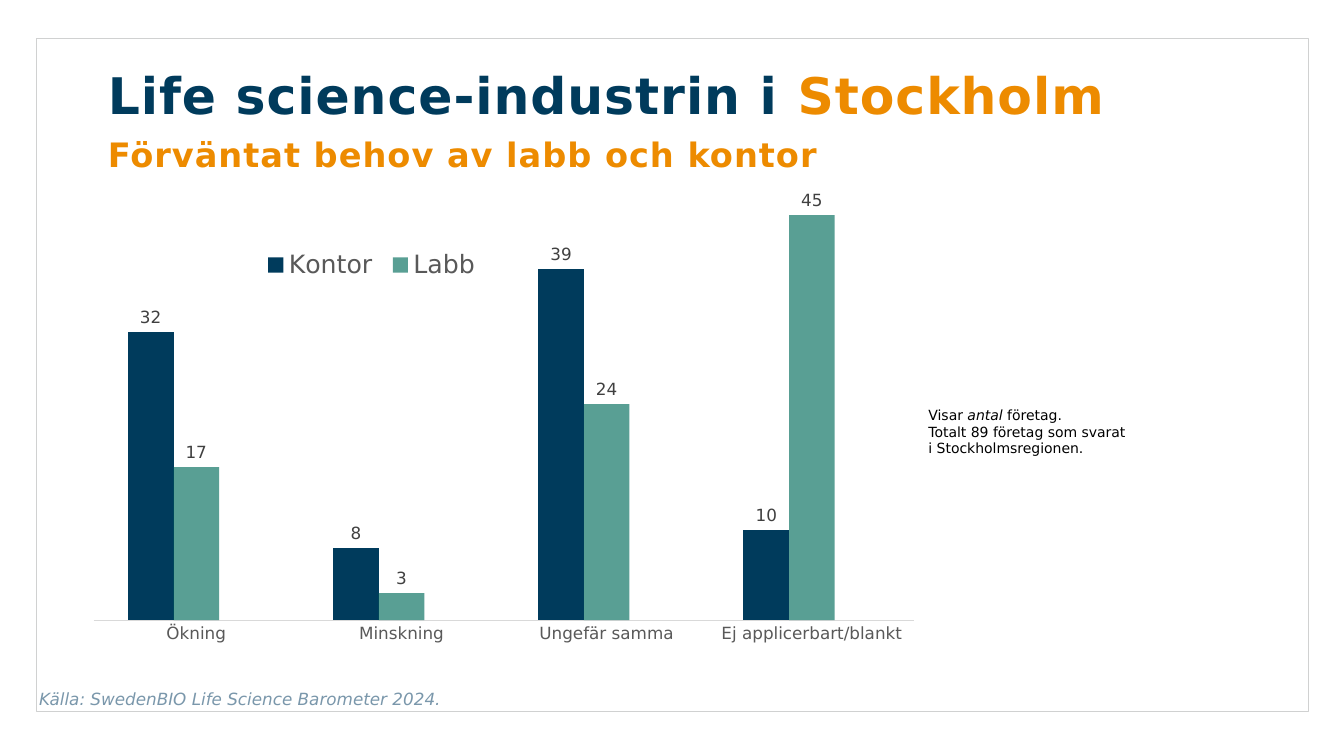
import pptx
import pptx.util
import pptx.chart.data
import pptx.dml.color
import pptx.enum.chart
import pptx.enum.shapes
import pptx.enum.text
import pptx.oxml
import pptx.oxml.ns

RGB = pptx.dml.color.RGBColor
NAVY = RGB(0x00, 0x3B, 0x5C)
ORANGE = RGB(0xED, 0x8B, 0x00)
GREEN = RGB(0x00, 0x6C, 0x5B)
STEEL = RGB(0x7A, 0x97, 0xAB)
BLACK = RGB(0x00, 0x00, 0x00)
DARK = RGB(0x40, 0x40, 0x40)
GREY = RGB(0x59, 0x59, 0x59)
RULE = RGB(0xD9, 0xD9, 0xD9)
EDGE = RGB(0xD0, 0xD1, 0xD1)

FACE = "DejaVu Sans"
WIDE = pptx.util.Inches(13.33)
HIGH = pptx.util.Inches(7.5)

CATS = ["Ökning", "Minskning", "Ungefär samma", "Ej applicerbart/blankt"]
# The empty third series keeps its slot beside each pair of columns
SERIES = [
    ("Kontor", [32, 8, 39, 10], NAVY),
    ("Labb", [17, 3, 24, 45], GREEN),
    ("Series 3", [None] * 4, STEEL),
]


def place(left, top, width, height):
    """Turn percentages of the slide into lengths."""
    return (int(WIDE * left / 100), int(HIGH * top / 100),
            int(WIDE * width / 100), int(HIGH * height / 100))


def style(font, size, color):
    font.name = FACE
    font.size = pptx.util.Pt(size)
    font.color.rgb = color


def node(xml):
    head, tail = xml.split(">", 1)
    space = pptx.oxml.ns.nsdecls("c", "a")
    return pptx.oxml.parse_xml(f"{head} {space}>{tail}")


def layout(left, top, width, height, inner=False):
    """Manual chart layout in shares of the chart's size."""
    target = '<c:layoutTarget val="inner"/>' if inner else ""
    sides = zip("xywh", (left, top, width, height))
    return node("<c:layout><c:manualLayout>" + target
                + '<c:xMode val="edge"/><c:yMode val="edge"/>'
                + "".join(f'<c:{k} val="{v}"/>' for k, v in sides)
                + "</c:manualLayout></c:layout>")


def add_frame(slide, area):
    frame = slide.shapes.add_shape(
        pptx.enum.shapes.MSO_SHAPE.RECTANGLE, *place(*area))
    frame.shadow.inherit = False
    frame.fill.background()
    frame.line.color.rgb = EDGE
    frame.line.width = pptx.util.Pt(0.25)


def add_box(slide, area, wrap=False):
    text = slide.shapes.add_textbox(*place(*area)).text_frame
    text.word_wrap = wrap
    if not wrap:
        text.auto_size = pptx.enum.text.MSO_AUTO_SIZE.SHAPE_TO_FIT_TEXT
    return text


def add_title(slide, area):
    text = add_box(slide, area, wrap=True)
    lines = [
        (36, [("Life science-industrin i ", NAVY), ("Stockholm", ORANGE)]),
        (24, [("Förväntat behov av labb och kontor", ORANGE)]),
    ]
    for i, (size, parts) in enumerate(lines):
        para = text.add_paragraph() if i else text.paragraphs[0]
        para.line_spacing = 0.9
        if i:
            para.space_before = pptx.util.Pt(10)
        for words, color in parts:
            run = para.add_run()
            run.text = words
            style(run.font, size, color)
            run.font.bold = True
            run.font._element.set("spc", "70")


def add_source(slide, area):
    para = add_box(slide, area).paragraphs[0]
    para.text = "Källa: SwedenBIO Life Science Barometer 2024."
    style(para.font, 12, STEEL)
    para.font.italic = True


def add_note(slide, area):
    para = add_box(slide, area).paragraphs[0]
    for words in ("Visar ", "antal", " företag."):
        run = para.add_run()
        run.text = words
        run.font.italic = words == "antal"
    for words in ("Totalt 89 företag som svarat", "i Stockholmsregionen."):
        para.add_line_break()
        para.add_run().text = words
    style(para.font, 10, BLACK)


def add_columns(slide, area):
    enum = pptx.enum.chart
    data = pptx.chart.data.CategoryChartData()
    data.categories = CATS
    for name, vals, _ in SERIES:
        data.add_series(name, vals)
    chart = slide.shapes.add_chart(
        enum.XL_CHART_TYPE.COLUMN_CLUSTERED, *place(*area), data).chart
    chart.has_title = False
    style(chart.font, 10, BLACK)

    # Columns and their values
    plot = chart.plots[0]
    plot.gap_width = 150
    plot.overlap = 0
    plot.vary_by_categories = False
    for series, (_, _, color) in zip(plot.series, SERIES):
        fill = series.format.fill
        fill.solid()
        fill.fore_color.rgb = color
        if color == GREEN:
            tint = next(series._element.iter(pptx.oxml.ns.qn("a:srgbClr")))
            tint.append(node('<a:alpha val="65000"></a:alpha>'))
        series.invert_if_negative = False
        labels = series.data_labels
        labels.show_value = True
        labels.position = enum.XL_LABEL_POSITION.OUTSIDE_END
        style(labels.font, 12, DARK)

    # Axes
    axis = chart.category_axis
    axis.major_tick_mark = enum.XL_TICK_MARK.NONE
    axis.format.line.color.rgb = RULE
    axis.format.line.width = pptx.util.Pt(0.75)
    style(axis.tick_labels.font, 12, GREY)
    scale = chart.value_axis
    scale.minimum_scale = 0
    scale.maximum_scale = 50
    scale.has_major_gridlines = False
    scale.visible = False

    # Legend without the empty series
    chart.has_legend = True
    legend = chart.legend
    legend.position = enum.XL_LEGEND_POSITION.BOTTOM
    legend.include_in_layout = False
    style(legend.font, 18, GREY)
    drop = node('<c:legendEntry><c:idx val="2"/><c:delete val="1"/>'
                '</c:legendEntry>')
    set_layout(legend._element, 1, layout(0.21, 0.15, 0.27, 0.09))
    legend._element.insert(1, drop)
    area = plot._element.getparent()
    set_layout(area, 0, layout(0.02, 0.02, 0.96, 0.83, inner=True))


def set_layout(part, index, new):
    for old in part.findall(pptx.oxml.ns.qn("c:layout")):
        part.remove(old)
    part.insert(index, new)


def main():
    deck = pptx.Presentation()
    deck.slide_width, deck.slide_height = WIDE, HIGH
    slide = deck.slides.add_slide(deck.slide_layouts[6])
    add_frame(slide, (2.7, 5.07, 94.67, 89.07))
    add_title(slide, (7.28, 8.67, 91.52, 22.13))
    add_source(slide, (2.18, 90.4, 32.26, 4))
    add_columns(slide, (5.7, 21.07, 63.62, 71.73))
    add_note(slide, (68.34, 53.07, 17.1, 8.13))
    deck.save("out.pptx")


if __name__ == "__main__":
    main()
